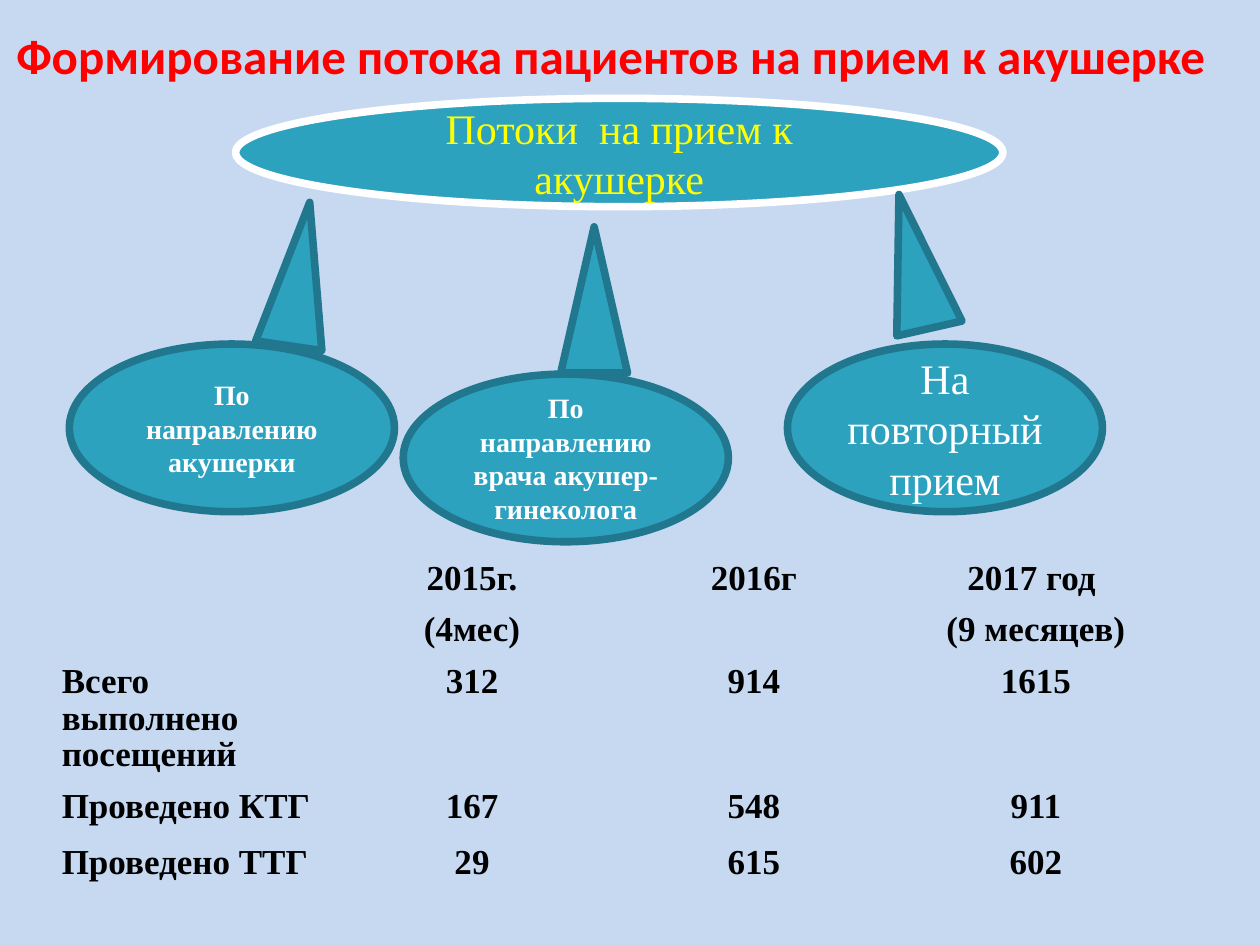
from pptx import Presentation
from pptx.dml.color import RGBColor
from pptx.enum import shapes as sh, text as tx
from pptx.util import Pt

SKY = RGBColor(0xC6, 0xD9, 0xF1)
TEAL = RGBColor(0x2D, 0xA2, 0xBF)
DARK = RGBColor(0x21, 0x77, 0x8D)
WHITE = RGBColor(0xFF, 0xFF, 0xFF)
YELLOW = RGBColor(0xFF, 0xFF, 0x00)
RED = RGBColor(0xFF, 0x00, 0x00)
BLACK = RGBColor(0x00, 0x00, 0x00)
SERIF = "Times New Roman"
NO_GRID = "{2D5ABB26-0587-4C30-8999-92F81FD0307C}"

# left, top, width, height, text, size, bold, font colour, line colour
OVALS = [
    (134.6, 56.2, 438.5, 61.9, "Потоки  на прием к акушерке", 24, False, YELLOW, WHITE),
    (39.6, 196.6, 185.8, 95.8, "По направлению акушерки", 16, True, WHITE, DARK),
    (230.4, 213.8, 185.8, 95.8, "По направлению врача акушер-гинеколога", 16, True, WHITE, DARK),
    (450, 196.6, 180, 95.8, "На повторный прием", 24, False, WHITE, DARK),
]
# left, top, height, rotation, head length
ARROWS = [
    (151.9, 115.2, 82.8, 188.3, 5.29),
    (320.4, 129.6, 83.5, 180, 5.78),
    (503.3, 110.2, 78.5, 167.2, 5.94),
]
ROWS = [
    ("", "2015г.\n(4мес)", "2016г", "2017 год \n(9 месяцев)"),
    ("Всего выполнено посещений", "312", "914", "1615"),
    ("Проведено КТГ", "167", "548", "911"),
    ("Проведено ТТГ", "29", "615", "602"),
]
TALL = [35.3, 45.4, 31.7, 40.3]


def style(par, name, size, bold, color, align=tx.PP_ALIGN.CENTER):
    par.alignment = align
    for run in par.runs:
        font = run.font
        font.name, font.size, font.bold = name, Pt(size), bold
        font.color.rgb = color


def add_form(slide, kind, box, line):
    form = slide.shapes.add_shape(kind, *map(Pt, box))
    form.shadow.inherit = False
    form.fill.solid()
    form.fill.fore_color.rgb = TEAL
    form.line.color.rgb = line
    form.line.width = Pt(4.34)
    return form


def add_oval(slide, left, top, width, height, words, size, bold, color, line):
    oval = add_form(slide, sh.MSO_SHAPE.OVAL, (left, top, width, height), line)
    frame = oval.text_frame
    frame.word_wrap = True
    frame.vertical_anchor = tx.MSO_ANCHOR.MIDDLE
    frame.text = words
    style(frame.paragraphs[0], SERIF, size, bold, color)


def add_arrow(slide, left, top, height, turn, head):
    arrow = add_form(slide, sh.MSO_SHAPE.DOWN_ARROW, (left, top, 38.2, height), DARK)
    arrow.adjustments[0] = 1
    arrow.adjustments[1] = head
    arrow.rotation = turn


def set_title(slide, words):
    title = slide.shapes.title
    title.left, title.top, title.width, title.height = map(Pt, (0, 11.5, 697.7, 39.6))
    frame = title.text_frame
    frame.word_wrap = True
    frame.auto_size = tx.MSO_AUTO_SIZE.NONE
    frame.vertical_anchor = tx.MSO_ANCHOR.MIDDLE
    frame.text = words
    style(frame.paragraphs[0], "Calibri", 28, True, RED)


def fill_cell(cell, words, align):
    cell.fill.background()
    cell.margin_top = Pt(5)
    cell.text_frame.text = words
    for i, par in enumerate(cell.text_frame.paragraphs):
        style(par, SERIF, 20, True, BLACK, align)
        par.line_spacing = 0.95
        par.space_before = Pt(8 if i else 0)


def add_visits(slide):
    frame = slide.shapes.add_table(len(ROWS), len(ROWS[0]), Pt(28.1), Pt(315.4),
                                   Pt(644.4), Pt(sum(TALL)))
    table = frame.table
    table.first_row = table.horz_banding = False
    table._tbl.tblPr[0].text = NO_GRID
    for r, row in enumerate(ROWS):
        table.rows[r].height = Pt(TALL[r])
        for c, words in enumerate(row):
            align = tx.PP_ALIGN.CENTER if c else tx.PP_ALIGN.LEFT
            fill_cell(table.cell(r, c), words, align)


def main():
    deck = Presentation()
    deck.slide_width, deck.slide_height = Pt(720), Pt(540)
    slide = deck.slides.add_slide(deck.slide_layouts[5])
    slide.background.fill.solid()
    slide.background.fill.fore_color.rgb = SKY

    set_title(slide, "Формирование потока пациентов на прием к акушерке")
    # Flow scheme
    for oval in OVALS:
        add_oval(slide, *oval)
    for arrow in ARROWS:
        add_arrow(slide, *arrow)
    # Visits by year
    add_visits(slide)
    deck.save("out.pptx")


if __name__ == "__main__":
    main()
